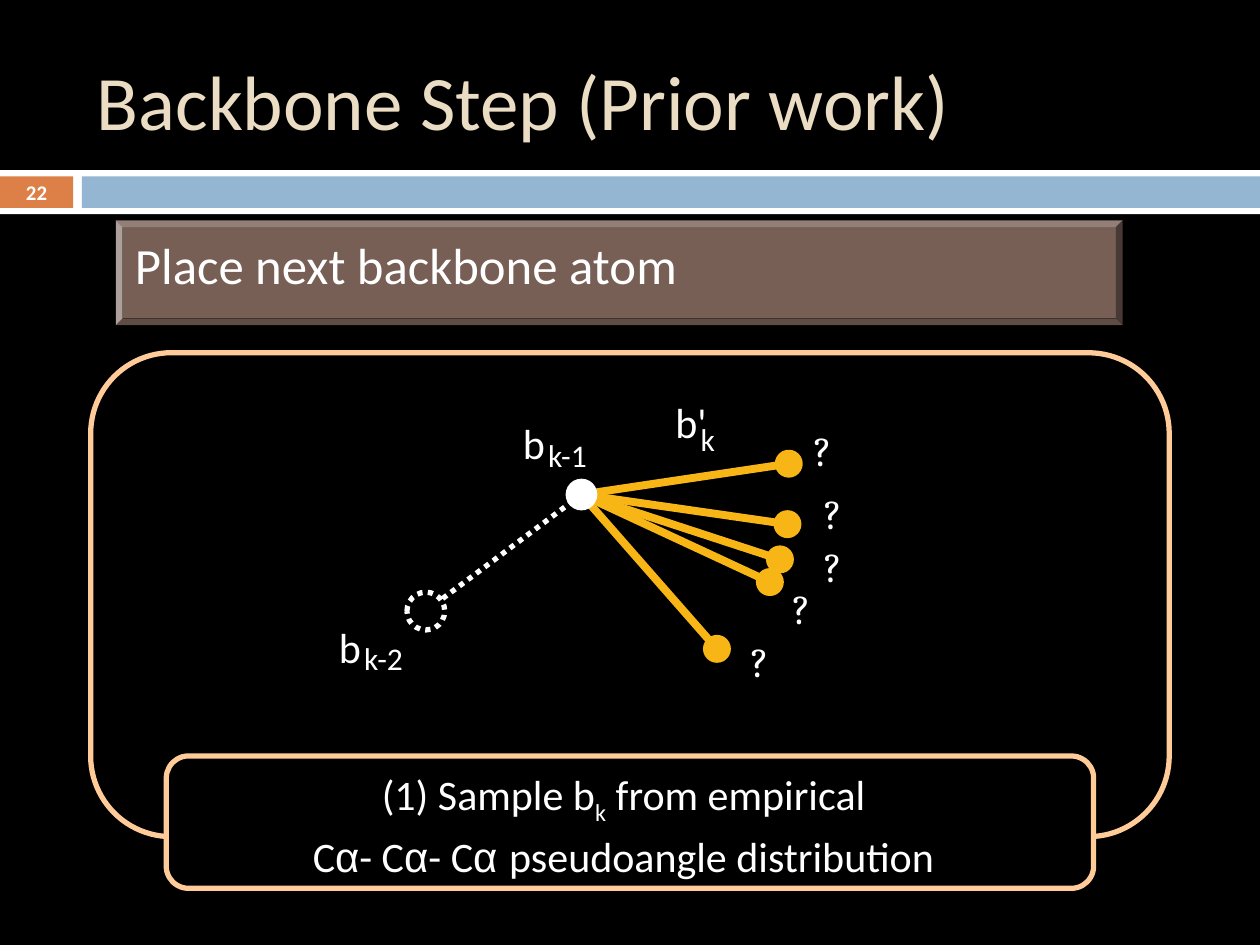
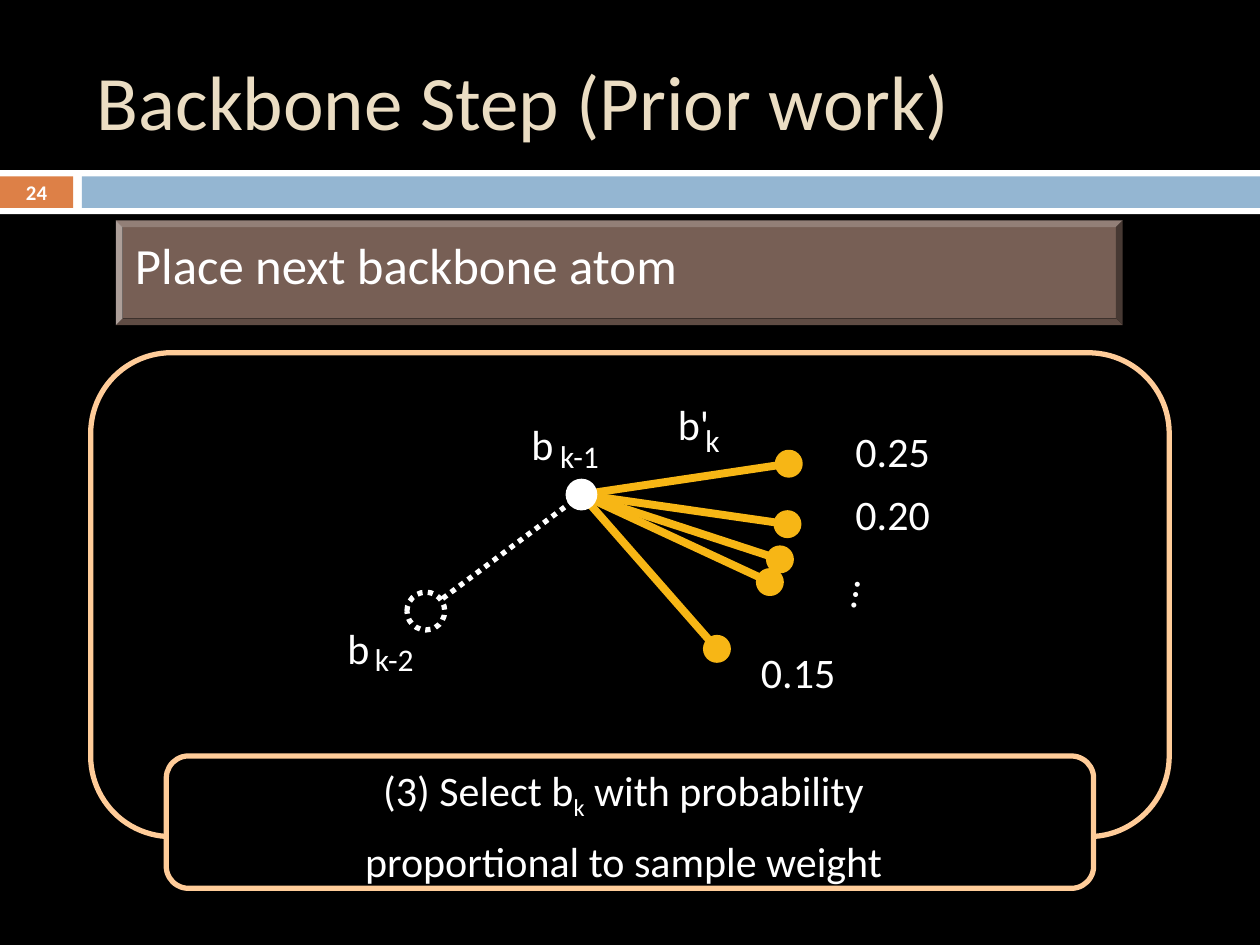
from pptx import Presentation
from pptx.dml.color import RGBColor
from pptx.enum.dml import MSO_LINE
from pptx.enum.shapes import MSO_CONNECTOR, MSO_SHAPE
from pptx.enum.text import MSO_ANCHOR, MSO_AUTO_SIZE, PP_ALIGN
from pptx.oxml.ns import qn
from pptx.util import Inches, Pt
from lxml.etree import SubElement

BLACK = RGBColor(0x00, 0x00, 0x00)
WHITE = RGBColor(0xFF, 0xFF, 0xFF)
ORANGE = RGBColor(0xDD, 0x80, 0x47)
BLUE = RGBColor(0x94, 0xB6, 0xD2)
BROWN = RGBColor(0x77, 0x5F, 0x55)
SAND = RGBColor(0xEB, 0xDD, 0xC3)
PEACH = RGBColor(0xFF, 0xCC, 0x99)
GOLD = RGBColor(0xF7, 0xB6, 0x15)

deck = Presentation()
deck.slide_width, deck.slide_height = Inches(10), Inches(7.5)
COL = deck.slide_width // 100
ROW = deck.slide_height // 75


def draw(slide, preset, x, y, w, h, fill=None, line=None):
    shape = slide.shapes.add_shape(preset, int(x * COL), int(y * ROW), int(w * COL), int(h * ROW))
    shape.shadow.inherit = False
    if fill is None:
        shape.fill.background()
    else:
        shape.fill.solid()
        shape.fill.fore_color.rgb = fill
    if line is None:
        shape.line.fill.background()
    else:
        shape.line.color.rgb = line
        shape.line.width = Pt(3)
    return shape


def style(paragraph, size, color=WHITE, font="Calibri", align=PP_ALIGN.LEFT):
    paragraph.alignment = align
    for run in paragraph.runs:
        run.font.size = Pt(size)
        run.font.name = font
        run.font.color.rgb = color


HUB = (46.15, 39.25)
PREVIOUS = (33.8, 48.5)
CANDIDATES = [(62.5, 41.6), (56.9, 51.5), (62.6, 36.8), (61.9, 44.4), (61.1, 46.2)]

STEPS = [
    {
        "number": "22",
        "insets": (0.4, 0.4),
        "align": PP_ALIGN.LEFT,
        "space": 5.8,
        "caption": [[("(1) Sample b", "Calibri"), ("k", "sub"), (" from empirical", "Calibri"),
                     ("\v", ""), ("C", "Calibri"), ("α", "Arial"), ("- C", "Calibri"),
                     ("α", "Arial"), ("- C", "Calibri"), ("α ", "Arial"),
                     ("pseudoangle distribution", "Calibri")]],
        "labels": [("b", 41.1, 32.7, 2.6, 24), ("k-1", 43.1, 34.2, 4.2, 18),
                   ("b'", 53.2, 31.1, 3.3, 24), ("k", 55.2, 32.9, 2, 18),
                   ("b", 26.5, 48.9, 2.6, 24), ("k-2", 28.5, 50.3, 4.2, 18)]
                  + [("?", x, y, 2.3, 24) for x, y in
                     [(64.2, 33.3), (65, 38.3), (65, 42.5), (62.5, 45.8), (59.2, 50)]],
    },
    {
        "number": "24",
        "insets": (1, 0.5),
        "align": PP_ALIGN.CENTER,
        "space": 4.8,
        "caption": [[("(3) Select b", "Calibri"), ("k", "sub"), (" with probability", "Calibri")],
                    [("proportional to sample weight", "Calibri")]],
        "labels": [("b", 41.1, 32.7, 3.9, 24), ("k-1", 43.3, 34.2, 5.4, 18),
                   ("b'", 52.8, 31.1, 4.5, 24), ("k", 55, 32.9, 3.1, 18),
                   ("b", 26.5, 48.9, 3.9, 24), ("k-2", 28.6, 50.3, 5.4, 18),
                   ("0.25", 66.7, 33.3, 8.3, 24), ("0.20", 66.7, 38.3, 8.3, 24),
                   ("…", 66.3, 44.9, 5.4, 24), ("0.15", 59.2, 50.8, 8.3, 24)],
    },
]

for step in STEPS:
    slide = deck.slides.add_slide(deck.slide_layouts[6])
    slide.background.fill.solid()
    slide.background.fill.fore_color.rgb = BLACK

    draw(slide, MSO_SHAPE.RECTANGLE, 0, 13.5, 100, 3.5, WHITE)
    draw(slide, MSO_SHAPE.RECTANGLE, 6.5, 14, 93.5, 2.5, BLUE)
    page = draw(slide, MSO_SHAPE.RECTANGLE, 0, 14, 5.8, 2.5, ORANGE).text_frame
    page.margin_top = page.margin_bottom = 0
    page.text = step["number"]
    style(page.paragraphs[0], 11.9, align=PP_ALIGN.CENTER)
    page.paragraphs[0].runs[0].font.bold = True

    title = slide.shapes.add_textbox(int(6.7 * COL), int(2.5 * ROW), int(89.2 * COL), int(10.8 * ROW)).text_frame
    title.word_wrap = True
    title.vertical_anchor = MSO_ANCHOR.MIDDLE
    title.text = "Backbone Step (Prior work)"
    style(title.paragraphs[0], 44, SAND)

    task = draw(slide, MSO_SHAPE.BEVEL, 9.2, 17.5, 79.9, 8.3, BROWN)
    task.adjustments[0] = 0.064
    task.text_frame.vertical_anchor = MSO_ANCHOR.TOP
    task.text_frame.text = "Place next backbone atom"
    task.text_frame.paragraphs[0].space_before = Pt(7)
    style(task.text_frame.paragraphs[0], 29)

    draw(slide, MSO_SHAPE.ROUNDED_RECTANGLE, 7.2, 28, 85.6, 38.4, line=PEACH)
    caption = draw(slide, MSO_SHAPE.ROUNDED_RECTANGLE, 13.2, 60, 73.6, 10.5, BLACK, PEACH).text_frame
    caption.margin_right = 2 * COL
    for index, pieces in enumerate(step["caption"]):
        paragraph = caption.add_paragraph() if index else caption.paragraphs[0]
        for words, font in pieces:
            if words == "\v":
                paragraph.add_line_break()
            else:
                paragraph.add_run().text = words
        style(paragraph, 24, align=PP_ALIGN.CENTER)
        paragraph.line_spacing = 1.1
        paragraph.space_before = Pt(step["space"])
        fonts = [font for words, font in pieces if words != "\v"]
        for run, font in zip(paragraph.runs, fonts):
            if font == "sub":
                run.font._element.set("baseline", "-25000")
            else:
                run.font.name = font

    for end in CANDIDATES + [PREVIOUS]:
        bond = slide.shapes.add_connector(MSO_CONNECTOR.STRAIGHT, int(HUB[0] * COL), int(HUB[1] * ROW),
                                          int(end[0] * COL), int(end[1] * ROW))
        SubElement(bond._element.spPr, qn("a:effectLst"))
        bond.line.color.rgb = WHITE if end == PREVIOUS else GOLD
        bond.line.width = Pt(3 if end == PREVIOUS else 4.5)
        if end == PREVIOUS:
            bond.line.dash_style = MSO_LINE.ROUND_DOT

    atoms = [(end, 1.8, GOLD, GOLD) for end in CANDIDATES]
    atoms += [(HUB, 2.1, WHITE, WHITE), (PREVIOUS, 3, BLACK, WHITE)]
    for (x, y), size, fill, line in atoms:
        atom = draw(slide, MSO_SHAPE.OVAL, x - size / 2, y - size / 2, size, size, fill, line)
        if fill == BLACK:
            atom.line.dash_style = MSO_LINE.ROUND_DOT

    for words, x, y, width, size in step["labels"]:
        across, down = step["insets"]
        height = size / 24 * 4.1 + 2 * down
        label = slide.shapes.add_textbox(int(x * COL), int(y * ROW), int(width * COL), int(height * ROW))
        frame = label.text_frame
        frame.margin_left = frame.margin_right = int(across * COL)
        frame.margin_top = frame.margin_bottom = int(down * ROW)
        frame.word_wrap = False
        frame.auto_size = MSO_AUTO_SIZE.SHAPE_TO_FIT_TEXT
        frame.text = words
        style(frame.paragraphs[0], size, font="Cambria" if words == "?" else "Calibri", align=step["align"])
        if words == "…":
            label.rotation = 99.5

deck.save("out.pptx")
